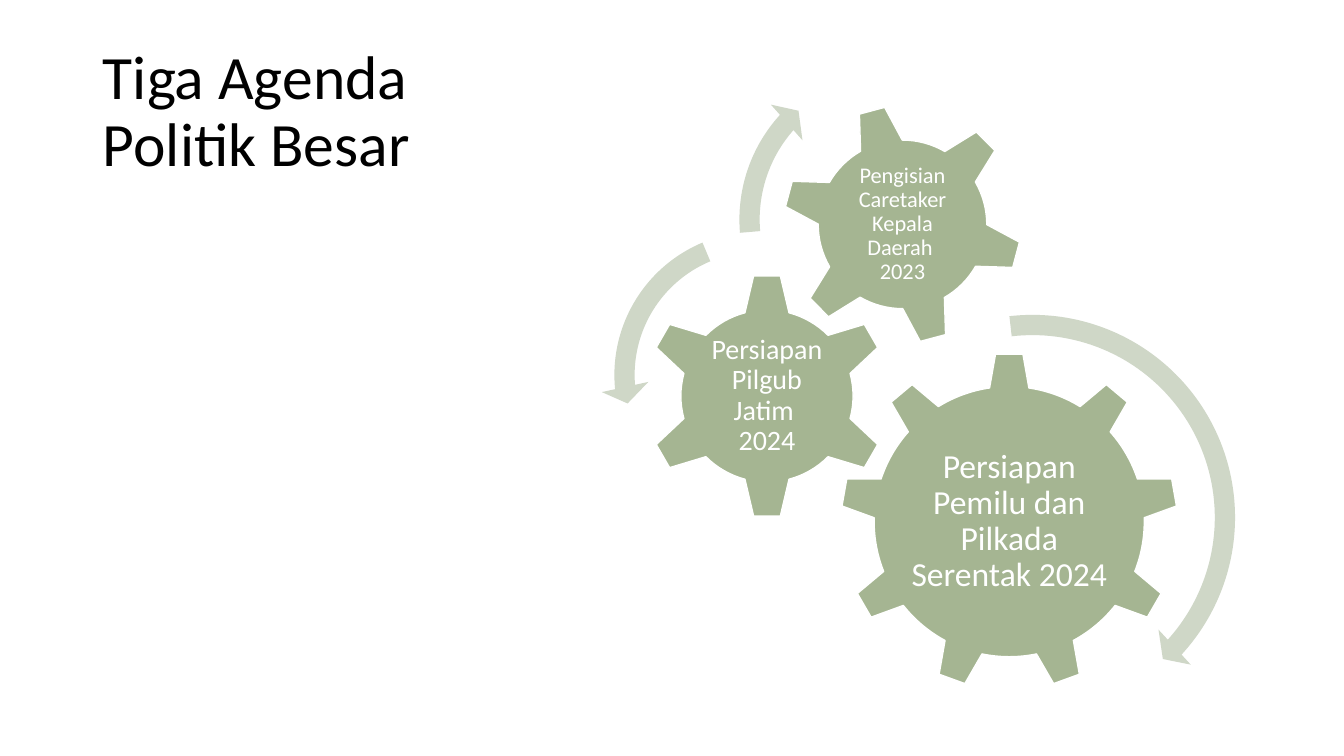
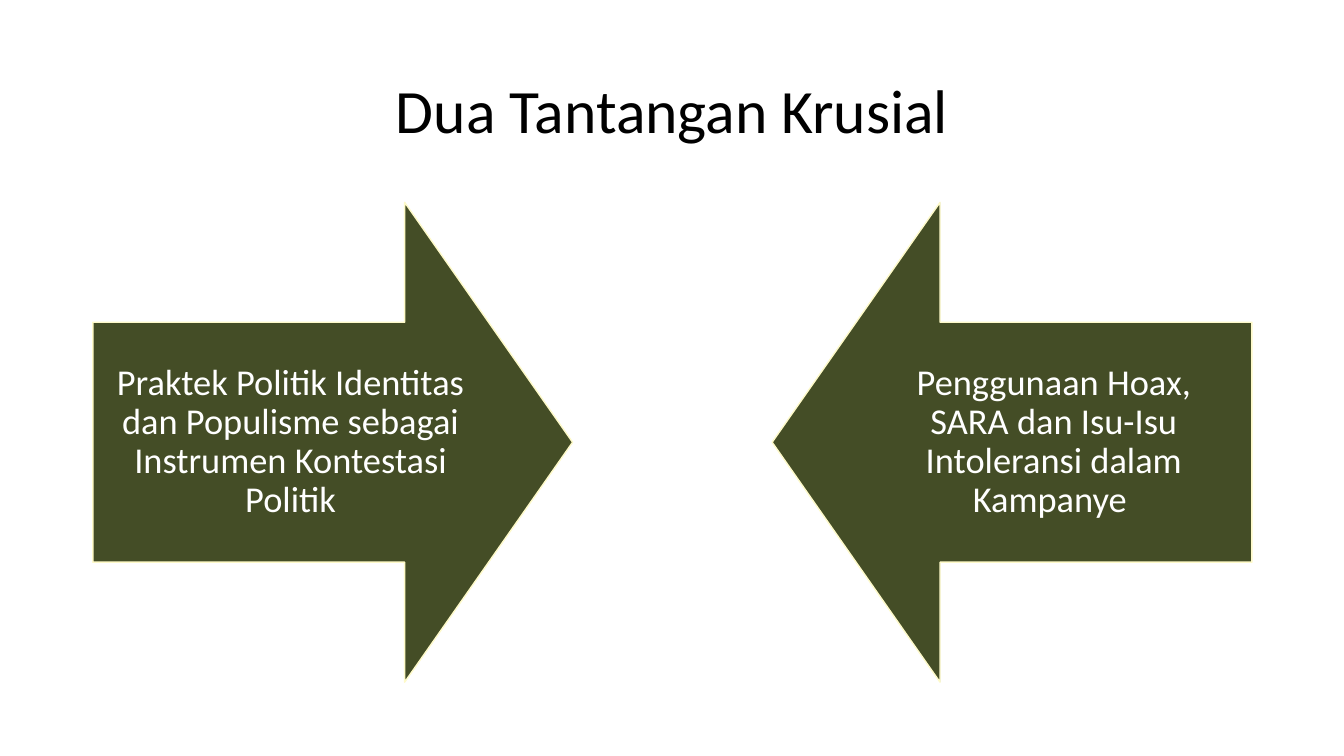
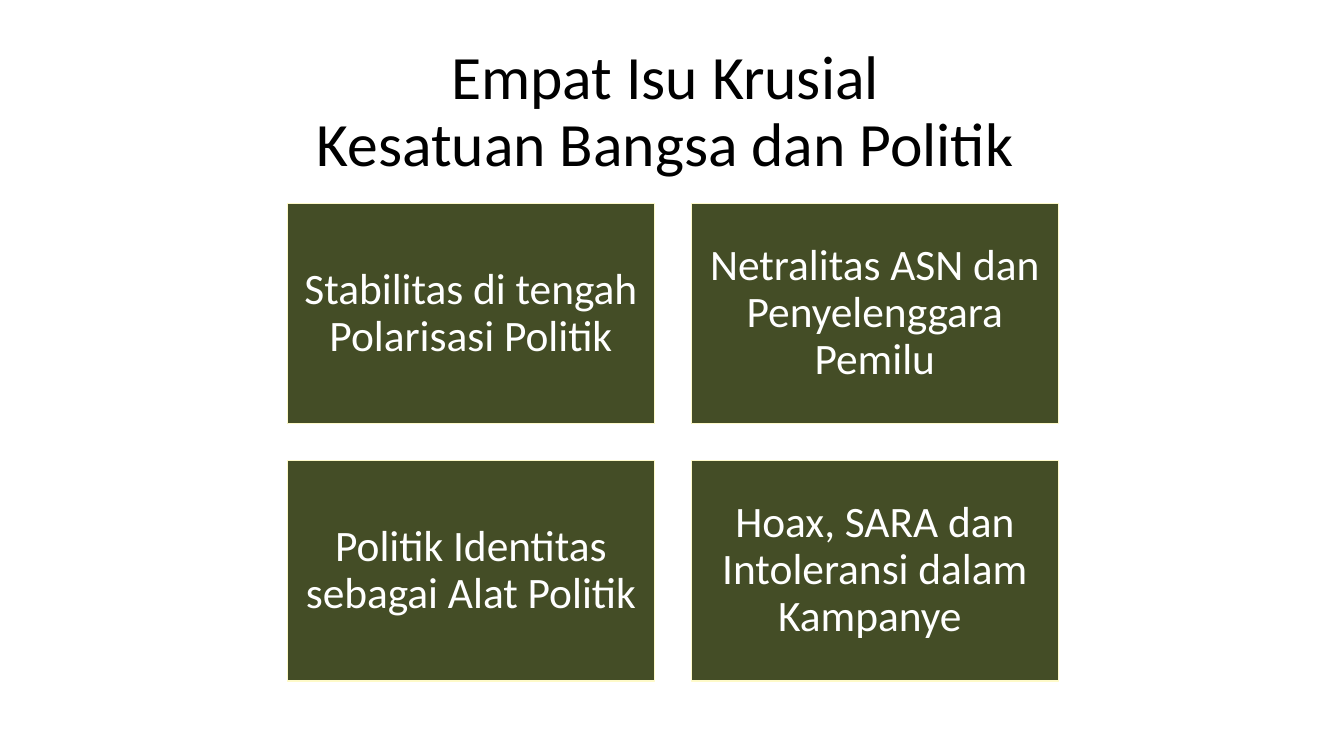
from dataclasses import dataclass

from pptx import Presentation
from pptx import util as u
from pptx.dml import color
from pptx.enum import shapes, text

FONT = "Calibri"
BLACK, WHITE = "000000", "FFFFFF"
SAGE, PALE_SAGE = "A5B592", "CFD7C7"
OLIVE, CREAM = "444D26", "FEFAC9"
SLIDE_WIDTH, SLIDE_HEIGHT = 33.87, 19.05
MARGIN = 2.34
CONTENT_WIDTH = 29.21
PRESET = shapes.MSO_SHAPE
CENTER = text.PP_ALIGN.CENTER


@dataclass(frozen=True)
class Gear:
    """A square gear with a label centred on it; lengths in cm."""
    preset: PRESET
    left: float
    top: float
    size: float
    label: str
    label_width: float
    label_height: float
    font_size: int
    rotation: int = 0


@dataclass(frozen=True)
class Swirl:
    """A curved arrow in a square box; angles in adjustment units."""
    preset: PRESET
    left: float
    top: float
    size: float
    head_angle: float
    end_angle: float
    start_angle: float


@dataclass(frozen=True)
class Challenge:
    """A block arrow and its text."""
    preset: PRESET
    left: float
    label: str


GEARS = (
    Gear(PRESET.GEAR_9, 21.18, 8.89, 8.51,
         "Persiapan Pemilu dan Pilkada Serentak 2024", 5.08, 4.37, 24),
    Gear(PRESET.GEAR_6, 16.23, 6.88, 6.2,
         "Persiapan Pilgub Jatim \n2024", 3.07, 3.05, 20),
    Gear(PRESET.GEAR_6, 19.71, 2.62, 6.07,
         "Pengisian Caretaker Kepala Daerah \n2023", 3.4, 3.4, 16, 345),
)
SWIRLS = (
    Swirl(PRESET.CIRCULAR_ARROW, 20.57, 7.59, 10.9, 2.99, 25.42, 158.08),
    Swirl(PRESET.LEFT_CIRCULAR_ARROW, 15.14, 5.49, 7.92, 4.3, 104.89, 148.38),
    Swirl(PRESET.CIRCULAR_ARROW, 18.29, 1.27, 8.53, 3.94, 133.14, 105.08),
)
CHALLENGES = (
    Challenge(PRESET.RIGHT_ARROW, MARGIN,
              "Praktek Politik Identitas dan Populisme sebagai Instrumen Kontestasi Politik"),
    Challenge(PRESET.LEFT_ARROW, 19.46,
              "Penggunaan Hoax, SARA dan Isu-Isu Intoleransi dalam Kampanye "),
)
ISSUES = (
    "Stabilitas di tengah Polarisasi Politik",
    "Netralitas ASN dan Penyelenggara Pemilu",
    "Politik Identitas sebagai Alat Politik",
    "Hoax, SARA dan Intoleransi dalam Kampanye ",
)


def rgb(value: str) -> color.RGBColor:
    """Turn a hex string into a colour."""
    return color.RGBColor.from_string(value)


def write(shape, content: str, *, size: int, fill: str = WHITE,
          align=CENTER, inset: float | None = None) -> None:
    """Write one formatted, vertically centred paragraph."""
    frame = shape.text_frame
    frame.word_wrap = True
    frame.auto_size = text.MSO_AUTO_SIZE.NONE
    frame.vertical_anchor = text.MSO_ANCHOR.MIDDLE
    if inset is not None:
        frame.margin_left = frame.margin_right = u.Cm(inset)
        frame.margin_top = frame.margin_bottom = u.Cm(inset)
    paragraph = frame.paragraphs[0]
    paragraph.text = content
    paragraph.alignment = align
    paragraph.line_spacing = 0.9
    for run in paragraph.runs:
        run.font.name = FONT
        run.font.size = u.Pt(size)
        run.font.color.rgb = rgb(fill)


def add_figure(slide, preset: PRESET, left: float, top: float, width: float,
               height: float, fill: str, line: str | None = None):
    """Add a flat preset shape."""
    shape = slide.shapes.add_shape(preset, *map(u.Cm, (left, top, width, height)))
    shape.shadow.inherit = False
    shape.fill.solid()
    shape.fill.fore_color.rgb = rgb(fill)
    if line:
        shape.line.color.rgb = rgb(line)
        shape.line.width = u.Pt(1)
    else:
        shape.line.fill.background()
    return shape


def add_titled_slide(presentation, title: str, *, width: float = CONTENT_WIDTH,
                     align=CENTER):
    """Add a slide with the shared title style."""
    slide = presentation.slides.add_slide(presentation.slide_layouts[5])
    shape = slide.shapes.title
    shape.left, shape.top = u.Cm(MARGIN), u.Cm(1.01)
    shape.width, shape.height = u.Cm(width), u.Cm(3.68)
    write(shape, title, size=44, fill=BLACK, align=align)
    return slide


def add_gear(slide, gear: Gear) -> None:
    """Draw a gear and its upright label."""
    shape = add_figure(slide, gear.preset, gear.left, gear.top,
                       gear.size, gear.size, SAGE, WHITE)
    shape.rotation = gear.rotation
    left = gear.left + (gear.size - gear.label_width) / 2
    top = gear.top + (gear.size - gear.label_height) / 2
    label = slide.shapes.add_textbox(
        *map(u.Cm, (left, top, gear.label_width, gear.label_height)))
    write(label, gear.label, size=gear.font_size, inset=0.06)


def add_swirl(slide, swirl: Swirl) -> None:
    """Draw a curved arrow with the common band and head thickness."""
    band, head = 0.51, 0.6
    shape = add_figure(slide, swirl.preset, swirl.left, swirl.top,
                       swirl.size, swirl.size, PALE_SAGE)
    values = (band / swirl.size, swirl.head_angle, swirl.end_angle,
              swirl.start_angle, head / swirl.size)
    for index, value in enumerate(values):
        shape.adjustments[index] = value


def build_agenda(presentation) -> None:
    """Build the slide of three meshing gears."""
    slide = add_titled_slide(presentation, "Tiga Agenda Politik Besar",
                             width=11.76, align=text.PP_ALIGN.LEFT)
    for gear in GEARS:
        add_gear(slide, gear)
    for swirl in SWIRLS:
        add_swirl(slide, swirl)


def build_challenges(presentation) -> None:
    """Build the slide of two facing arrows."""
    slide = add_titled_slide(presentation, "Dua Tantangan Krusial")
    size = 12.09
    for challenge in CHALLENGES:
        arrow = add_figure(slide, challenge.preset, challenge.left, 5.1,
                           size, size, OLIVE, CREAM)
        arrow.adjustments[0] = 0.5
        arrow.adjustments[1] = 0.35
        write(arrow, challenge.label, size=26, inset=0.51)


def build_issues(presentation) -> None:
    """Build the slide of a two by two grid."""
    slide = add_titled_slide(
        presentation, "Empat Isu Krusial \nKesatuan Bangsa dan Politik ")
    left, top, width, height, gap = 7.24, 5.13, 9.25, 5.55, 0.93
    for index, issue in enumerate(ISSUES):
        row, column = divmod(index, 2)
        tile = add_figure(slide, PRESET.RECTANGLE,
                          left + column * (width + gap), top + row * (height + gap),
                          width, height, OLIVE, CREAM)
        write(tile, issue, size=31, inset=0.33)


def main() -> None:
    """Build and save the presentation."""
    presentation = Presentation()
    presentation.slide_width = u.Cm(SLIDE_WIDTH)
    presentation.slide_height = u.Cm(SLIDE_HEIGHT)
    build_agenda(presentation)
    build_challenges(presentation)
    build_issues(presentation)
    presentation.save("out.pptx")


if __name__ == "__main__":
    main()
